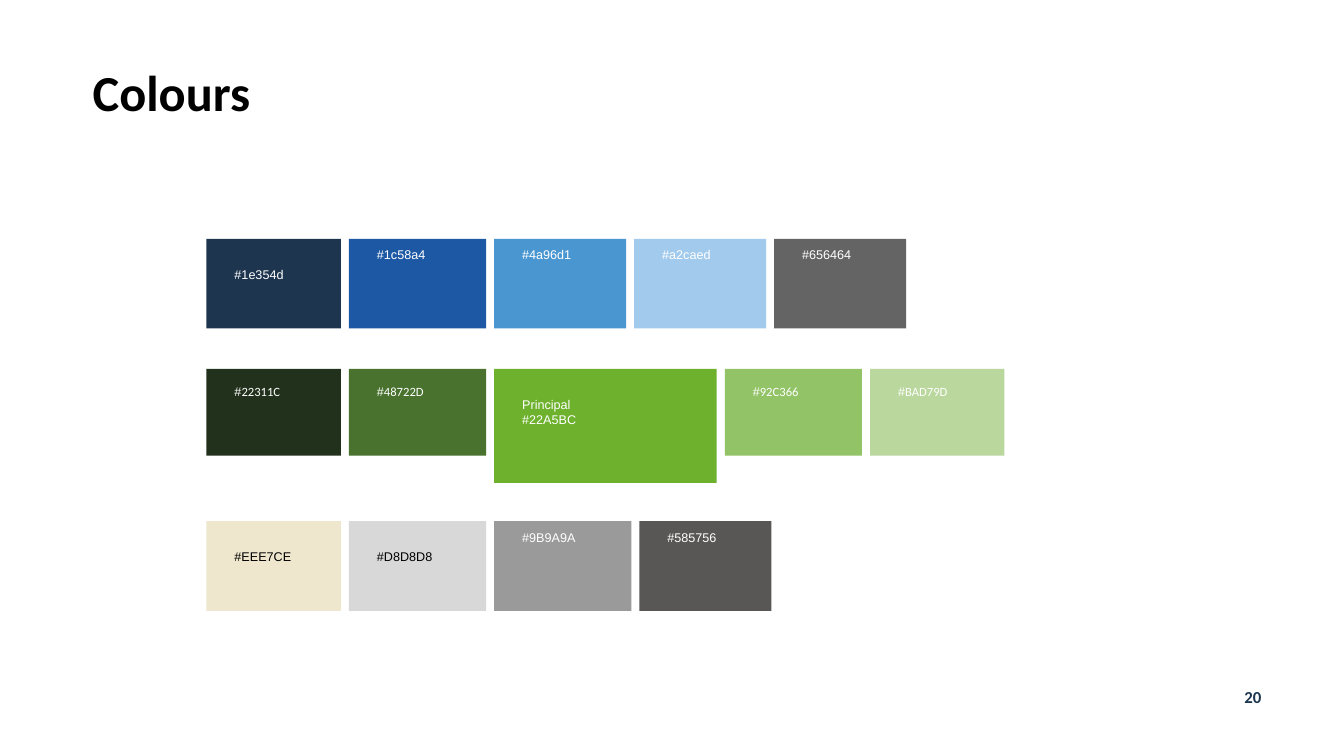
from typing import NamedTuple

from pptx import Presentation
from pptx.dml.color import RGBColor
from pptx.enum.shapes import MSO_SHAPE as Shape
from pptx.enum.text import MSO_ANCHOR as Anchor, PP_ALIGN as Align
from pptx.util import Pt

LEFT, GAP, PAD = 147.5, 5.75, 20


class Swatch(NamedTuple):
    width: float
    fill: str
    label: str
    inset: float = 6
    ink: str = "FFFFFF"
    height: float = 0
    digits: str = ""


class Row(NamedTuple):
    top: float
    height: float
    items: list[Swatch]


ROWS = [
    Row(170.6, 64, [
        Swatch(96, "1D354E", "#1e354d", PAD),
        Swatch(98, "1C58A4", "#1c58a4"),
        Swatch(94.25, "4A96D1", "#4a96d1"),
        Swatch(94.25, "A2CAED", "#a2caed"),
        Swatch(94.25, "656464", "#656464"),
    ]),
    Row(263.5, 62, [
        Swatch(96, "22311C", "#", 11, digits="22311C"),
        Swatch(98, "48722D", "#", 11, digits="48722D"),
        Swatch(159, "6DB12D", "Principal\n#22A5BC", PAD, height=81.4),
        Swatch(98, "92C366", "#", 11, digits="92C366"),
        Swatch(96, "BAD79D", "#", 11, digits="BAD79D"),
    ]),
    Row(372.3, 64, [
        Swatch(96, "EEE7CE", "#EEE7CE", PAD, "000000"),
        Swatch(98, "D8D8D8", "#D8D8D8", PAD, "000000"),
        Swatch(98, "9B9A9A", "#9B9A9A"),
        Swatch(94.25, "585756", "#585756"),
    ]),
]


def paint(target, code: str) -> None:
    """Set the colour of a font or a fill."""
    if hasattr(target, "solid"):
        target.solid()
        target.fore_color.rgb = RGBColor.from_string(code)
    else:
        target.color.rgb = RGBColor.from_string(code)


def style(font, name: str, size: float, code: str, bold: bool = False) -> None:
    font.name, font.size, font.bold = name, Pt(size), bold
    paint(font, code)


def draw_swatch(slide, left: float, row: Row, item: Swatch) -> None:
    box = slide.shapes.add_shape(
        Shape.RECTANGLE, Pt(left), Pt(row.top), Pt(item.width),
        Pt(item.height or row.height))
    box.shadow.inherit = False
    paint(box.fill, item.fill)
    box.line.fill.background()
    frame = box.text_frame
    frame.word_wrap = True
    frame.vertical_anchor = Anchor.TOP
    frame.margin_left = frame.margin_right = Pt(PAD)
    frame.margin_top, frame.margin_bottom = Pt(item.inset), Pt(0)
    frame.text = item.label
    for para in frame.paragraphs:
        para.alignment = Align.LEFT
        style(para.font, "Arial", 9, item.ink)
    if item.digits:
        run = frame.paragraphs[0].add_run()
        run.text = item.digits
        run.font.name = "Calibri"


def draw_row(slide, row: Row) -> None:
    left = LEFT
    for item in row.items:
        draw_swatch(slide, left, row, item)
        left += item.width + GAP


def draw_title(slide, text: str) -> None:
    title = slide.shapes.title
    title.left, title.top = Pt(59), Pt(44.6)
    title.width, title.height = Pt(569.5), Pt(46.8)
    frame = title.text_frame
    frame.text = text
    frame.vertical_anchor = Anchor.MIDDLE
    para = frame.paragraphs[0]
    para.alignment, para.line_spacing = Align.LEFT, 0.9
    style(para.font, "Calibri", 36, "000000", True)


def draw_number(slide, text: str) -> None:
    box = slide.shapes.add_textbox(Pt(859), Pt(486.7), Pt(72), Pt(21.6))
    frame = box.text_frame
    frame.word_wrap = True
    frame.text = text
    para = frame.paragraphs[0]
    para.alignment = Align.CENTER
    style(para.font, "Calibri", 12, "1D344D", True)


def main() -> None:
    deck = Presentation()
    deck.slide_width, deck.slide_height = Pt(960), Pt(540)
    slide = deck.slides.add_slide(deck.slide_layouts.get_by_name("Title Only"))
    draw_title(slide, "Colours")
    for row in ROWS:
        draw_row(slide, row)
    draw_number(slide, "20")
    deck.save("out.pptx")


if __name__ == "__main__":
    main()
